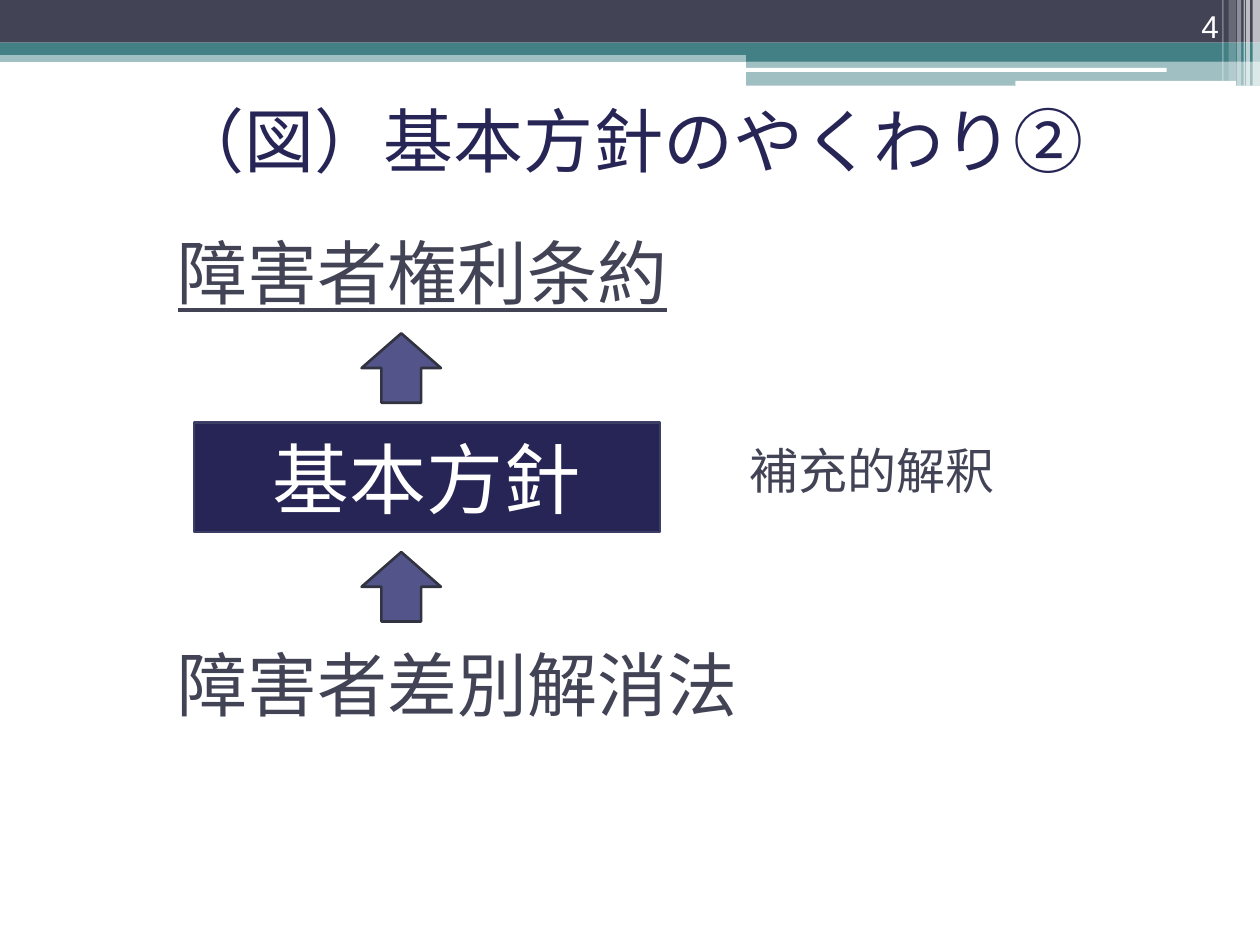
from pptx import Presentation
from pptx.dml.color import RGBColor
from pptx.enum.shapes import MSO_SHAPE
from pptx.enum.text import MSO_ANCHOR, PP_ALIGN
from pptx.oxml.ns import qn
from pptx.util import Cm, Pt
from lxml import etree

RECTANGLE, ROUNDED = MSO_SHAPE.RECTANGLE, MSO_SHAPE.ROUNDED_RECTANGLE
UP_ARROW = MSO_SHAPE.UP_ARROW
MIDDLE, BOTTOM = MSO_ANCHOR.MIDDLE, MSO_ANCHOR.BOTTOM
LEFT, CENTER, RIGHT = PP_ALIGN.LEFT, PP_ALIGN.CENTER, PP_ALIGN.RIGHT

WHITE = RGBColor(0xFF, 0xFF, 0xFF)
SLATE = RGBColor(0x42, 0x44, 0x56)
TEAL = RGBColor(0x43, 0x80, 0x86)
NAVY = RGBColor(0x27, 0x25, 0x55)
NAVY_EDGE = RGBColor(0x3D, 0x3E, 0x66)
VIOLET = RGBColor(0x53, 0x54, 0x8A)
VIOLET_EDGE = RGBColor(0x32, 0x33, 0x41)
FONT = "Arial"


def add_block(page, kind, left, top, width, height, color, edge=None, opacity=100):
    block = page.shapes.add_shape(kind, Cm(left), Cm(top), Cm(width), Cm(height))
    block.shadow.inherit = False
    block.fill.solid()
    block.fill.fore_color.rgb = color
    if opacity < 100:
        tone = block.fill._xPr.find(".//" + qn("a:srgbClr"))
        etree.SubElement(tone, qn("a:alpha"), val=str(opacity * 1000))
    if edge is None:
        block.line.fill.background()
    else:
        block.line.color.rgb = edge
        block.line.width = Pt(1.5)
    return block


def write(shape, text, size, color, align=LEFT, anchor=MIDDLE):
    frame = shape.text_frame
    frame.word_wrap = True
    frame.vertical_anchor = anchor
    para = frame.paragraphs[0]
    para.text = text
    para.alignment = align
    para.font.name = FONT
    para.font.size = Pt(size)
    para.font.color.rgb = color
    return para


def add_label(page, text, left, top, width, height, size, color, **layout):
    label = page.shapes.add_textbox(Cm(left), Cm(top), Cm(width), Cm(height))
    label.text_frame.margin_left = 0
    return write(label, text, size, color, **layout)


def add_header(page, left, top, width):
    # Horizontal bands: offset, top, width, height, colour, opacity
    wing = 15.04
    bands = [
        (0, 1.02, width, 0.23, TEAL, 50),
        (0, 0, width, 0.86, SLATE, 100),
        (0, 0.86, width, 0.25, TEAL, 100),
        (wing, 0.99, width - wing, 0.25, TEAL, 100),
        (wing, 1.22, width - wing, 0.51, TEAL, 50),
    ]
    for x, y, w, h, color, opacity in bands:
        add_block(page, RECTANGLE, left + x, top + y, w, h, color, opacity=opacity)

    # Thin white rules
    for x, y, w, h in [(15.01, 1.37, 8.51, 0.08), (20.47, 1.63, 4.45, 0.1)]:
        add_block(page, ROUNDED, left + x, top + y, w, h, WHITE)

    # Vertical stripes at the right edge: offset, width, height, opacity
    stripes = [
        (25.25, 0.15, 1.73, 65), (25.12, 0.08, 1.73, 65), (25.07, 0.03, 1.73, 60),
        (24.94, 0.08, 1.73, 40), (24.77, 0.15, 1.63, 20), (24.64, 0.03, 1.63, 30),
    ]
    for x, w, h, opacity in stripes:
        add_block(page, RECTANGLE, left + x, top, w, h, WHITE, opacity=opacity)

    # Page number
    add_label(page, "4", left + 22.71, top, 2.11, 1.02, 18, WHITE,
              align=RIGHT, anchor=BOTTOM)


def add_title(page, left, top, width, height):
    title = page.shapes.title
    title.left, title.top = Cm(left), Cm(top)
    title.width, title.height = Cm(width), Cm(height)
    write(title, "（図）基本方針のやくわり②", 40, NAVY, align=CENTER)


def add_policy_diagram(page, left, top, width):
    label_height, arrow_height, policy_height = 1.9, 1.4, 2.21
    label_gap, arrow_gap = 0.3, 0.4

    # Vertical stack: treaty, arrow, policy, arrow, law
    upper_arrow_top = top + label_height + label_gap
    policy_top = upper_arrow_top + arrow_height + arrow_gap
    lower_arrow_top = policy_top + policy_height + arrow_gap
    law_top = lower_arrow_top + arrow_height + label_gap

    treaty = add_label(page, "障害者権利条約", left, top, width, label_height, 40, SLATE)
    treaty.font.underline = True
    add_label(page, "障害者差別解消法", left, law_top, width, label_height, 40, SLATE)

    policy = add_block(page, RECTANGLE, left + 0.33, policy_top, 9.4, policy_height,
                       NAVY, NAVY_EDGE)
    write(policy, "基本方針", 44, WHITE, align=CENTER)
    add_label(page, "補充的解釈", left + 11.53, policy_top, width - 11.53,
              label_height, 28, SLATE)

    for arrow_top in (upper_arrow_top, lower_arrow_top):
        add_block(page, UP_ARROW, left + 3.71, arrow_top, 1.6, arrow_height,
                  VIOLET, VIOLET_EDGE)


def main():
    deck = Presentation()
    deck.slide_width, deck.slide_height = Cm(25.4), Cm(19.05)
    page = deck.slides.add_slide(deck.slide_layouts[5])
    add_header(page, 0, 0, 25.4)
    add_title(page, 0.71, 1.73, 23.93, 2.18)
    add_policy_diagram(page, 3.58, 4.52, 21)
    deck.save("out.pptx")


if __name__ == "__main__":
    main()
